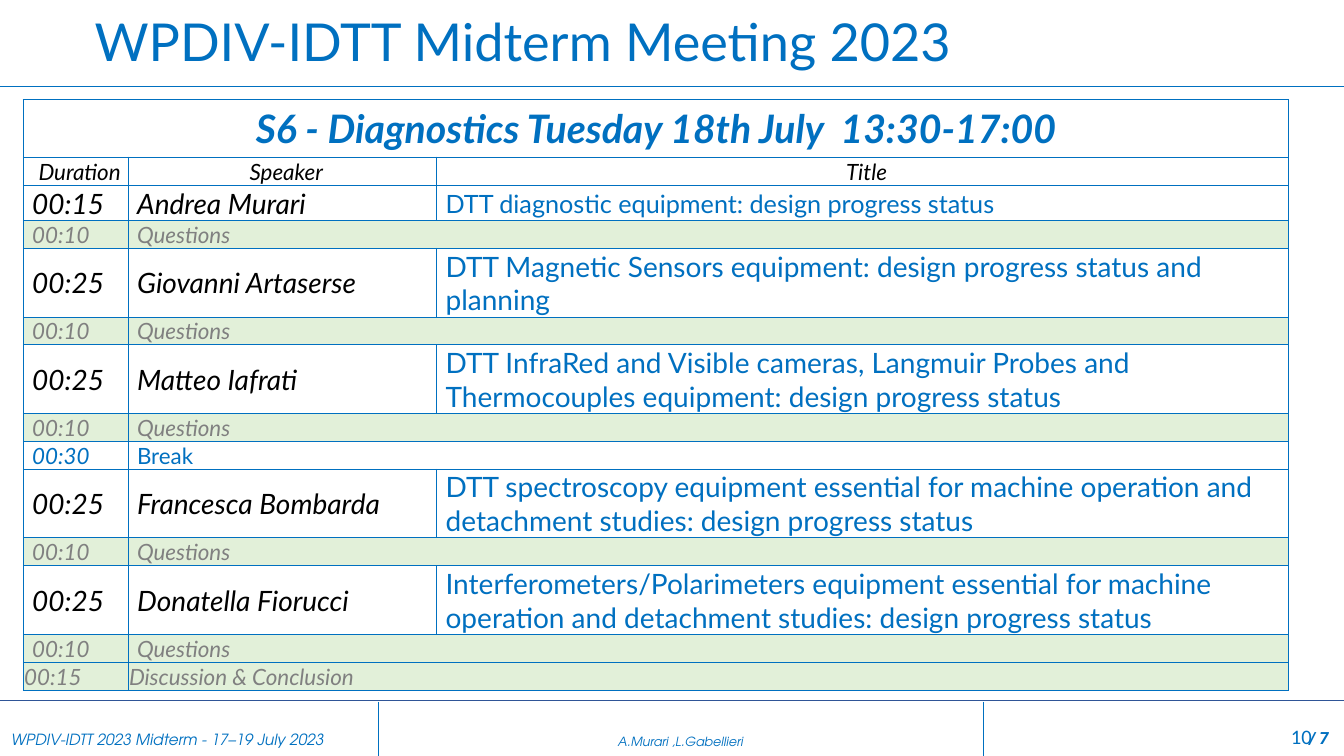
import lxml.etree
import pptx
import pptx.dml.color
import pptx.enum.shapes
import pptx.enum.text
import pptx.oxml.ns
import pptx.util

Inches = pptx.util.Inches
Pt = pptx.util.Pt
ALIGN = pptx.enum.text.PP_ALIGN
ANCHOR = pptx.enum.text.MSO_ANCHOR
qn = pptx.oxml.ns.qn

BLUE, BLACK, GREY, WHITE, GREEN = "0070C0", "000000", "808080", "FFFFFF", "E2F0D9"
NO_STYLE = "{2D5ABB26-0587-4C30-8999-92F81FD0307C}"


def write_text(text_frame, text, size, color=BLUE, font="Lato", bold=False, italic=False,
               align=ALIGN.LEFT, indent=0):
    """Put one formatted paragraph into a text frame."""
    text_frame.text = text
    text_frame.word_wrap = True
    paragraph = text_frame.paragraphs[0]
    paragraph.alignment = align
    if indent:
        properties = paragraph._p.get_or_add_pPr()
        properties.set("marL", str(Inches(indent)))
        properties.set("indent", "0")
    run_font = paragraph.runs[0].font
    run_font.name, run_font.size = font, Pt(size)
    run_font.bold, run_font.italic = bold, italic
    run_font.color.rgb = pptx.dml.color.RGBColor.from_string(color)


def style_cell(cell, sides, width, margins, anchor, fill=None):
    """Set borders on the given sides (letters of LRTB), margins, anchor and fill."""
    cell.margin_left, cell.margin_top, cell.margin_right, cell.margin_bottom = map(Inches, margins)
    cell.vertical_anchor = anchor
    if fill:
        cell.fill.solid()
        cell.fill.fore_color.rgb = pptx.dml.color.RGBColor.from_string(fill)
    else:
        cell.fill.background()
    properties = cell._tc.get_or_add_tcPr()
    for position, side in enumerate(sides):
        line = lxml.etree.Element(qn(f"a:ln{side}"), w=str(Pt(width)))
        solid = lxml.etree.SubElement(line, qn("a:solidFill"))
        lxml.etree.SubElement(solid, qn("a:srgbClr"), val=BLUE)
        properties.insert(position, line)


presentation = pptx.Presentation()
presentation.slide_width, presentation.slide_height = Inches(13.33), Inches(7.5)
slide = presentation.slides.add_slide(presentation.slide_layouts[6])

# Rules above and below the agenda
for y, color in ((0.86, BLUE), (6.95, "2F5597")):
    rule = slide.shapes.add_connector(pptx.enum.shapes.MSO_CONNECTOR.STRAIGHT,
                                      Inches(0), Inches(y), Inches(13.33), Inches(y))
    rule.line.color.rgb = pptx.dml.color.RGBColor.from_string(color)
    rule.line.width = Pt(0.5)
    lxml.etree.SubElement(rule._element.spPr, qn("a:effectLst"))

# Title and slide number
title = slide.shapes.add_textbox(Inches(0.84), Inches(0.11), Inches(10.59), Inches(0.66))
write_text(title.text_frame, "WPDIV-IDTT Midterm Meeting 2023", 37.3)
title.text_frame.vertical_anchor = ANCHOR.MIDDLE
title.text_frame.paragraphs[0].line_spacing = 0.9
number = slide.shapes.add_textbox(Inches(10.11), Inches(7.13), Inches(3), Inches(0.4))
write_text(number.text_frame, "10", 14.7, font="Calibri", align=ALIGN.RIGHT)

# Both tables: empty grids with the column widths and row heights
footer_widths, footer_heights = [3.77, 6, 3.56], [0.54]
agenda_widths = [1.04, 3.06, 8.45]
QUESTIONS = ("00:10", "Questions", None)
agenda = [
    ("00:15", "Andrea Murari", "DTT diagnostic equipment: design progress status"),
    QUESTIONS,
    ("00:25", "Giovanni Artaserse",
     "DTT Magnetic Sensors equipment: design progress status and planning"),
    QUESTIONS,
    ("00:25", "Matteo Iafrati",
     "DTT InfraRed and Visible cameras, Langmuir Probes and Thermocouples equipment: "
     "design progress status"),
    QUESTIONS,
    ("00:30", "Break", None),
    ("00:25", "Francesca Bombarda",
     "DTT spectroscopy equipment essential for machine operation and detachment studies: "
     "design progress status"),
    QUESTIONS,
    ("00:25", "Donatella Fiorucci",
     "Interferometers/Polarimeters equipment essential for machine operation and "
     "detachment studies: design progress status"),
    QUESTIONS,
    ("00:15", "Discussion & Conclusion", None),
]
row_heights = {"00:25": 0.68}
agenda_heights = [0.57, 0.27, 0.35] + [row_heights.get(row[0], 0.27) for row in agenda[1:]]

tables = []
for left, top, widths, heights in ((-0.02, 6.96, footer_widths, footer_heights),
                                   (0.23, 0.99, agenda_widths, agenda_heights)):
    table = slide.shapes.add_table(len(heights), len(widths), Inches(left), Inches(top),
                                   Inches(sum(widths)), Inches(sum(heights))).table
    table.first_row = table.horz_banding = False
    table._tbl.tblPr.find(qn("a:tableStyleId")).text = NO_STYLE
    for column, width in zip(table.columns, widths):
        column.width = Inches(width)
    for row, height in zip(table.rows, heights):
        row.height = Inches(height)
    tables.append(table)
footer_table, agenda_table = tables

# Footer
footer = [
    ("WPDIV-IDTT 2023 Midterm - 17–19 July 2023", 11, "TeX Gyre Adventor", False, ALIGN.LEFT, "R"),
    ("A.Murari ,L.Gabellieri", 9, "TeX Gyre Adventor", False, ALIGN.CENTER, "LR"),
    ("/ 7", 12, "Roboto", True, ALIGN.RIGHT, "L"),
]
for column, (text, size, font, bold, align, sides) in enumerate(footer):
    cell = footer_table.cell(0, column)
    write_text(cell.text_frame, text, size, font=font, bold=bold, italic=True, align=align)
    style_cell(cell, sides, 0.25, (0.13, 0.07, 0.13, 0.07), ANCHOR.BOTTOM)

# Agenda: session heading and column headings
TIGHT = (0.01, 0.01, 0.01, 0)
agenda_table.cell(0, 0).merge(agenda_table.cell(0, 2))
write_text(agenda_table.cell(0, 0).text_frame, "S6 - Diagnostics Tuesday 18th July  13:30-17:00",
           28, bold=True, italic=True, align=ALIGN.CENTER)
for column, heading in enumerate(("Duration", "Speaker", "Title")):
    style_cell(agenda_table.cell(0, column), "LRTB", 1, (0.1, 0.05, 0.1, 0.05), ANCHOR.TOP, WHITE)
    cell = agenda_table.cell(1, column)
    write_text(cell.text_frame, heading, 16, BLACK, italic=True, align=ALIGN.CENTER, indent=0.08)
    style_cell(cell, "LRTB", 0.5, TIGHT, ANCHOR.BOTTOM, WHITE)

# Agenda: talks, question slots, break and conclusion
for row, texts in enumerate(agenda, start=2):
    is_talk, is_break = texts[2] is not None, texts[1] == "Break"
    is_last = row == len(agenda) + 1
    fill = WHITE if is_talk or is_break else GREEN
    if not is_talk:
        agenda_table.cell(row, 1).merge(agenda_table.cell(row, 2))
    for column, text in enumerate(texts):
        cell = agenda_table.cell(row, column)
        at_bottom = (row == 2 and column < 2) or (is_last and column == 1)
        style_cell(cell, "LRTB", 0.5, TIGHT, ANCHOR.BOTTOM if at_bottom else ANCHOR.MIDDLE, fill)
        if text is None:
            continue
        size = 16 if not is_talk else 18 if row == 2 and column == 2 else 20
        color = BLUE if is_break or column == 2 else BLACK if is_talk else GREY
        upright = column == 2 or text == "Break"
        write_text(cell.text_frame, text, size, color, italic=not upright,
                   indent=0 if is_last else 0.08)

presentation.save("out.pptx")
